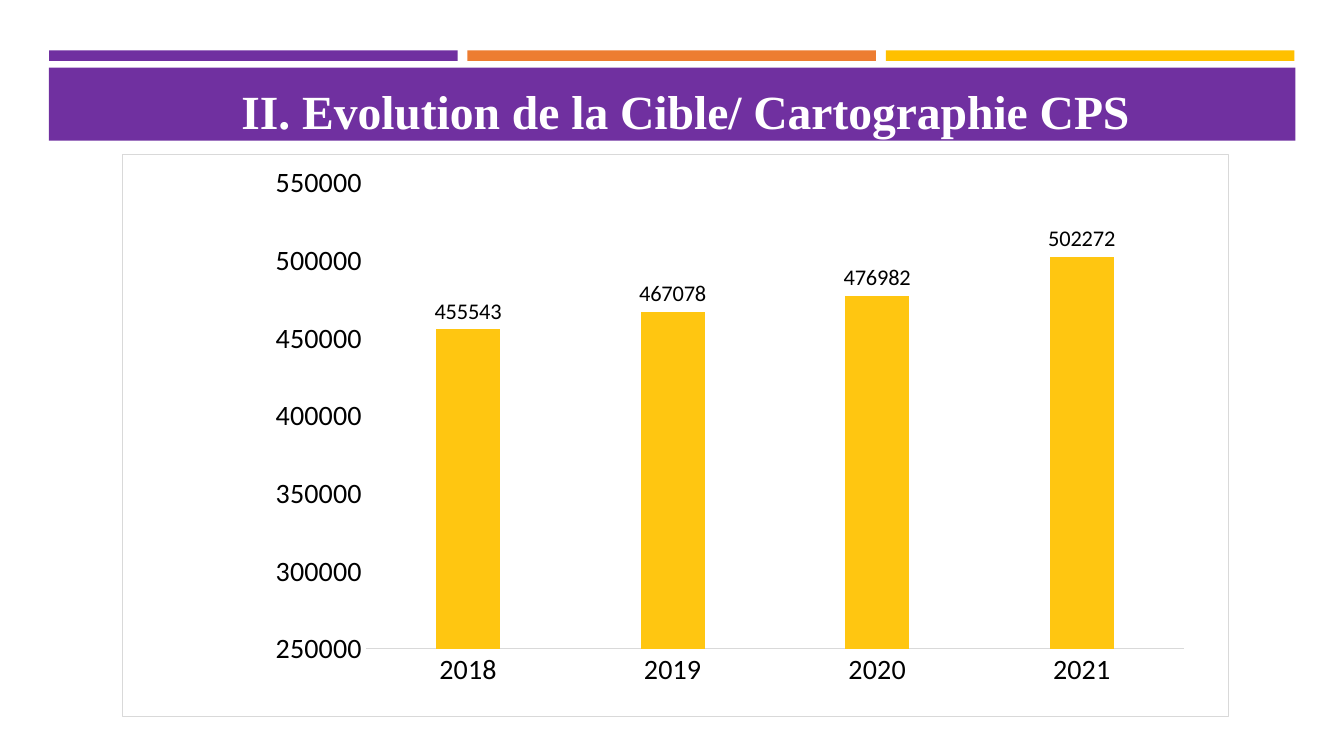
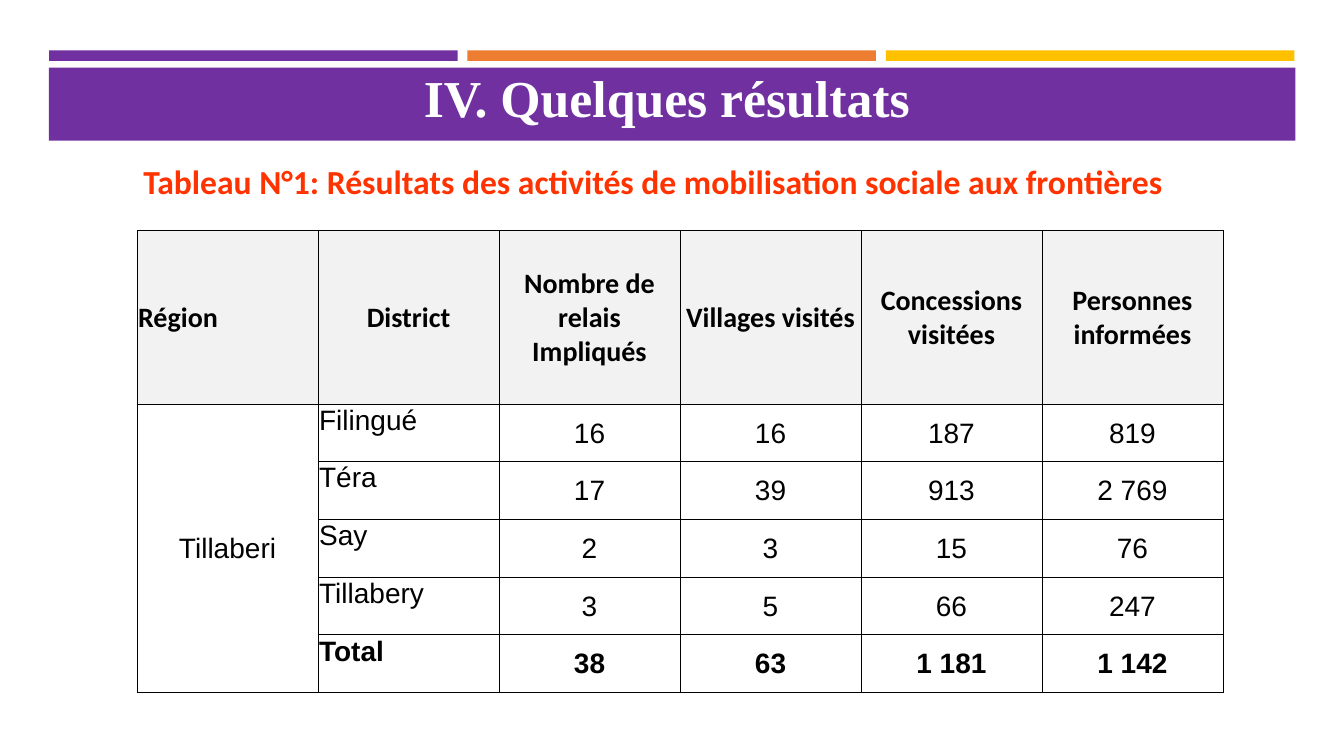
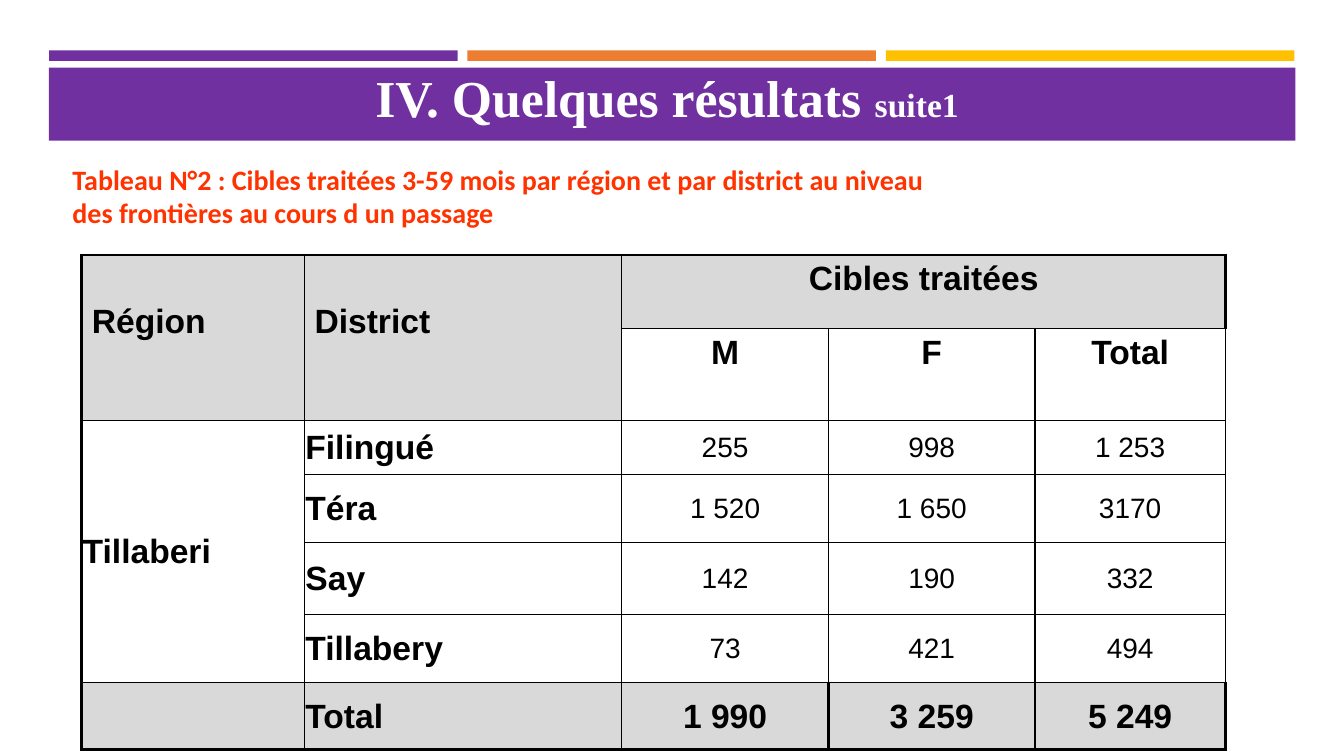
from dataclasses import dataclass, replace
from typing import Callable, NamedTuple, Optional, Sequence

import lxml.etree
import pptx
import pptx.chart.data
import pptx.dml.color
import pptx.enum.chart
import pptx.enum.shapes
import pptx.enum.text
import pptx.oxml
import pptx.oxml.ns
import pptx.util

ALIGN = pptx.enum.text.PP_ALIGN
ANCHOR = pptx.enum.text.MSO_ANCHOR
qn = pptx.oxml.ns.qn

SLIDE_WIDTH = pptx.util.Inches(13.33)
SLIDE_HEIGHT = pptx.util.Inches(7.5)


@dataclass(frozen=True)
class Theme:
    """Colours, fonts and type sizes of the whole deck."""
    purple: str = "7030A0"
    orange: str = "ED7D31"
    gold: str = "FFC000"
    bar: str = "FFC611"
    caption: str = "FF3300"
    black: str = "000000"
    white: str = "FFFFFF"
    light_grey: str = "F2F2F2"
    grey: str = "D9D9D9"
    title_font: str = "Times New Roman"
    body_font: str = "Calibri"
    table_font: str = "Arial"
    title_size: float = 37
    long_title_size: float = 34
    suffix_size: float = 24
    large_size: float = 24
    body_size: float = 20
    label_size: float = 16


THEME = Theme()


class Frame(NamedTuple):
    """A rectangle in percent of the slide's width and height."""
    left: float
    top: float
    width: float
    height: float

    def emu(self) -> tuple[int, int, int, int]:
        return (round(self.left * SLIDE_WIDTH / 100), round(self.top * SLIDE_HEIGHT / 100),
                round(self.width * SLIDE_WIDTH / 100), round(self.height * SLIDE_HEIGHT / 100))


class Span(NamedTuple):
    text: str
    size: float
    font: str
    color: str
    bold: bool = True


class Margins(NamedTuple):
    """Cell insets in inches."""
    left: float
    top: float
    right: float
    bottom: float


TIGHT = Margins(0.01, 0.01, 0.01, 0)
ROOMY = Margins(0.1, 0.05, 0.1, 0.05)


@dataclass(frozen=True)
class CellStyle:
    size: float = THEME.body_size
    font: str = THEME.table_font
    bold: bool = False
    align: ALIGN = ALIGN.CENTER
    anchor: ANCHOR = ANCHOR.MIDDLE
    margins: Margins = TIGHT
    fill: str = THEME.white


class Cell(NamedTuple):
    text: str
    style: CellStyle


class Merge(NamedTuple):
    row: int
    column: int
    last_row: int
    last_column: int


class Edges(NamedTuple):
    """Border widths of a cell in points."""
    left: float
    right: float
    top: float
    bottom: float


Grid = Sequence[Sequence[Optional[Cell]]]
TITLE_FRAME = Frame(3.83, 9.33, 91.6, 8.27)
LONG_TITLE_FRAME = Frame(2.93, 7.33, 96.2, 11.73)


def rgb(color: str) -> pptx.dml.color.RGBColor:
    return pptx.dml.color.RGBColor.from_string(color)


def style_font(font, size: float, name: str, color: str, bold: bool = False) -> None:
    font.size = pptx.util.Pt(size)
    font.name = name
    font.bold = bold
    font.color.rgb = rgb(color)


def add_spans(para, spans: Sequence[Span], align: ALIGN) -> None:
    para.alignment = align
    for span in spans:
        run = para.add_run()
        run.text = span.text
        style_font(run.font, span.size, span.font, span.color, span.bold)


# Shared parts
def add_band(page, frame: Frame, color: str):
    band = page.shapes.add_shape(pptx.enum.shapes.MSO_SHAPE.RECTANGLE, *frame.emu())
    band.shadow.inherit = False
    band.fill.solid()
    band.fill.fore_color.rgb = rgb(color)
    band.line.fill.background()
    return band


def add_bands_to_layout(layout, page) -> None:
    """Draw the header bands, then move them to the layout all slides use."""
    bands = [add_band(page, Frame(3.65 + 31.13 * index, 6.67, 30.4, 1.4), color)
             for index, color in enumerate((THEME.purple, THEME.orange, THEME.gold))]
    bands.append(add_band(page, Frame(3.63, 8.95, 92.75, 9.65), THEME.purple))
    for band in bands:
        layout.shapes.element.append(band.element)


def title_span(text: str, size: float = THEME.title_size) -> Span:
    return Span(text, size, THEME.title_font, THEME.white)


def set_title(page, spans: Sequence[Span], frame: Frame = TITLE_FRAME) -> None:
    title = page.shapes.title
    title.left, title.top, title.width, title.height = frame.emu()
    text = title.text_frame
    text.auto_size = pptx.enum.text.MSO_AUTO_SIZE.NONE
    text.word_wrap = True
    text.vertical_anchor = ANCHOR.BOTTOM
    add_spans(text.paragraphs[0], spans, ALIGN.CENTER)


def add_caption(page, frame: Frame, text: str, size: float, align: ALIGN, anchor: ANCHOR,
                line_spacing: float = 1.0) -> None:
    box = page.shapes.add_textbox(*frame.emu()).text_frame
    box.word_wrap = True
    box.vertical_anchor = anchor
    para = box.paragraphs[0]
    para.line_spacing = line_spacing
    add_spans(para, [Span(text, size, THEME.body_font, THEME.caption)], align)


# Tables
def set_borders(cell, edges: Edges) -> None:
    properties = cell._tc.get_or_add_tcPr()
    for index, (side, width) in enumerate(zip("LRTB", edges)):
        line = lxml.etree.Element(qn(f"a:ln{side}"), w=str(pptx.util.Pt(width)))
        fill = lxml.etree.SubElement(line, qn("a:solidFill"))
        lxml.etree.SubElement(fill, qn("a:srgbClr"), val=THEME.black)
        properties.insert(index, line)


def fill_cell(cell, content: Cell) -> None:
    style = content.style
    (cell.margin_left, cell.margin_top, cell.margin_right,
     cell.margin_bottom) = map(pptx.util.Inches, style.margins)
    cell.vertical_anchor = style.anchor
    cell.fill.solid()
    cell.fill.fore_color.rgb = rgb(style.fill)
    if content.text:
        span = Span(content.text, style.size, style.font, THEME.black, style.bold)
        add_spans(cell.text_frame.paragraphs[0], [span], style.align)


def add_grid(page, frame: Frame, columns: Sequence[float], rows: Sequence[float], grid: Grid,
             merges: Sequence[Merge], edges: Callable[[int, int], Edges]) -> None:
    """Draw a table; columns and rows are relative sizes within the frame."""
    left, top, width, height = frame.emu()
    table = page.shapes.add_table(len(rows), len(columns), left, top, width, height).table
    table.first_row = table.horz_banding = False
    for column, weight in zip(table.columns, columns):
        column.width = round(width * weight / sum(columns))
    for row, weight in zip(table.rows, rows):
        row.height = round(height * weight / sum(rows))
    for row_index, contents in enumerate(grid):
        for column_index, content in enumerate(contents):
            cell = table.cell(row_index, column_index)
            fill_cell(cell, content or Cell("", CellStyle()))
            set_borders(cell, edges(row_index, column_index))
    for merge in merges:
        table.cell(merge.row, merge.column).merge(table.cell(merge.last_row, merge.last_column))


def cells(texts: Sequence[str], style: CellStyle) -> list[Cell]:
    return [Cell(text, style) for text in texts]


# Chart
def set_plot_area(chart, x: float, y: float, width: float, height: float) -> None:
    area = chart.element.find(".//" + qn("c:plotArea"))
    for old in area.findall(qn("c:layout")):
        area.remove(old)
    layout = lxml.etree.Element(qn("c:layout"))
    manual = lxml.etree.SubElement(layout, qn("c:manualLayout"))
    settings = dict(layoutTarget="inner", xMode="edge", yMode="edge", x=x, y=y, w=width, h=height)
    for tag, value in settings.items():
        lxml.etree.SubElement(manual, qn(f"c:{tag}"), val=str(value))
    area.insert(0, layout)


def set_chart_border(chart, color: str, width: float) -> None:
    border = pptx.oxml.parse_xml(
        f'<c:spPr {pptx.oxml.ns.nsdecls("c", "a")}><a:noFill/>'
        f'<a:ln w="{pptx.util.Pt(width)}"><a:solidFill><a:srgbClr val="{color}"/>'
        f'</a:solidFill></a:ln></c:spPr>')
    chart.element.find(qn("c:chart")).addnext(border)


def add_target_chart(page, frame: Frame) -> None:
    data = pptx.chart.data.CategoryChartData()
    data.categories = ["2018", "2019", "2020", "2021"]
    data.add_series("Series 1", (455543, 467078, 476982, 502272))
    kind = pptx.enum.chart.XL_CHART_TYPE.COLUMN_CLUSTERED
    chart = page.shapes.add_chart(kind, *frame.emu(), data).chart
    chart.has_legend = chart.has_title = False
    style_font(chart.font, THEME.body_size, THEME.body_font, THEME.black)
    set_plot_area(chart, 0.22, 0.05, 0.74, 0.83)
    set_chart_border(chart, THEME.grey, 0.75)

    for axis in (chart.category_axis, chart.value_axis):
        axis.has_major_gridlines = False
        axis.major_tick_mark = axis.minor_tick_mark = pptx.enum.chart.XL_TICK_MARK.NONE
        style_font(axis.tick_labels.font, THEME.body_size, THEME.body_font, THEME.black)
    chart.category_axis.format.line.color.rgb = rgb(THEME.grey)
    chart.category_axis.format.line.width = pptx.util.Pt(0.75)
    values = chart.value_axis
    values.format.line.fill.background()
    values.minimum_scale, values.maximum_scale, values.major_unit = 250000, 550000, 50000

    plot = chart.plots[0]
    plot.gap_width, plot.overlap, plot.vary_by_categories = 219, -27, False
    series = plot.series[0]
    series.format.fill.solid()
    series.format.fill.fore_color.rgb = rgb(THEME.bar)
    labels = series.data_labels
    labels.show_value = True
    labels.position = pptx.enum.chart.XL_LABEL_POSITION.OUTSIDE_END
    style_font(labels.font, THEME.label_size, THEME.body_font, THEME.black)


# Slides
def fill_target_page(page) -> None:
    set_title(page, [title_span("II. Evolution de la Cible/ Cartographie CPS",
                                THEME.long_title_size)], LONG_TITLE_FRAME)
    add_target_chart(page, Frame(9.08, 20.4, 82.35, 74.4))


def fill_mobilisation_page(page) -> None:
    set_title(page, [title_span("IV. Quelques résultats")])
    add_caption(page, Frame(9.22, 20.27, 78.75, 7.07),
                "Tableau N°1: Résultats des activités de mobilisation sociale aux frontières",
                THEME.large_size, ALIGN.CENTER, ANCHOR.BOTTOM, 0.9)

    header = CellStyle(font=THEME.body_font, bold=True, fill=THEME.light_grey)
    number = CellStyle()
    district = replace(number, align=ALIGN.LEFT, anchor=ANCHOR.TOP)
    grid: list[list[Optional[Cell]]] = [
        [Cell("Région", replace(header, align=ALIGN.LEFT)),
         *cells(("District", "Nombre de relais Impliqués", "Villages visités",
                 "Concessions visitées", "Personnes informées"), header)]]
    records = (("Filingué", "16", "16", "187", "819"),
               ("Téra", "17", "39", "913", "2 769"),
               ("Say", "2", "3", "15", "76"),
               ("Tillabery", "3", "5", "66", "247"),
               ("Total", "38", "63", "1 181", "1 142"))
    for index, (name, *counts) in enumerate(records):
        bold = name == "Total"
        grid.append([None if index else Cell("Tillaberi", number),
                     Cell(name, replace(district, bold=bold)),
                     *cells(counts, replace(number, bold=bold))])
    add_grid(page, Frame(10.2, 30.53, 80.8, 61.07), [1] * 6, [3] + [1] * 5, grid,
             [Merge(1, 0, 5, 0)], lambda row, column: Edges(0.5, 0.5, 0.5, 0.5))


def treated_edges(row: int, column: int) -> Edges:
    """Heavy outer frame, and heavy lines between the totals."""
    thin, heavy = 1, 2.25
    last = row == 6
    return Edges(left=heavy if column == 0 or last and column > 2 else thin,
                 right=heavy if row == 0 and column in (2, 4) or last and column > 1 else thin,
                 top=heavy if row == 0 else thin,
                 bottom=heavy if last else thin)


def fill_treated_page(page) -> None:
    set_title(page, [title_span("IV. Quelques résultats "),
                     title_span("suite1", THEME.suffix_size)])

    label = CellStyle(size=THEME.large_size, bold=True, align=ALIGN.LEFT)
    heading = replace(label, align=ALIGN.CENTER, anchor=ANCHOR.TOP, margins=ROOMY)
    shaded = replace(heading, fill=THEME.grey)
    tall = replace(shaded, align=ALIGN.LEFT, margins=ROOMY._replace(top=0.48))
    total = replace(label, fill=THEME.grey)
    grid: list[list[Optional[Cell]]] = [
        [*cells(("Région", "District"), tall), Cell("Cibles traitées", shaded), None, None],
        [None, None, *cells(("M", "F", "Total"), heading)]]
    records = (("Filingué", "255", "998", "1 253"),
               ("Téra", "1 520", "1 650", "3170"),
               ("Say", "142", "190", "332"),
               ("Tillabery", "73", "421", "494"))
    for index, (name, *counts) in enumerate(records):
        grid.append([None if index else Cell("Tillaberi", label), Cell(name, label),
                     *cells(counts, CellStyle())])
    grid.append([*cells(("", "Total"), total),
                 *cells(("1 990", "3 259", "5 249"), replace(total, align=ALIGN.CENTER))])
    add_grid(page, Frame(6.08, 33.73, 85.1, 65.47), (2.21, 3.15, 2.05, 2.05, 1.89),
             (0.73, 0.91, 0.54, 0.67, 0.72, 0.67, 0.67), grid,
             [Merge(0, 0, 1, 0), Merge(0, 1, 1, 1), Merge(0, 2, 0, 4), Merge(2, 0, 5, 0)],
             treated_edges)
    add_caption(page, Frame(4.65, 20.8, 67.35, 10.27),
                "Tableau N°2 : Cibles traitées 3-59 mois par région et par district au niveau "
                "des frontières au cours d un passage",
                THEME.body_size, ALIGN.LEFT, ANCHOR.TOP)


def main() -> None:
    deck = pptx.Presentation()
    deck.slide_width, deck.slide_height = SLIDE_WIDTH, SLIDE_HEIGHT
    layout = deck.slide_layouts.get_by_name("Title Only")
    pages = [deck.slides.add_slide(layout) for _ in range(3)]
    add_bands_to_layout(layout, pages[0])
    for fill_page, page in zip((fill_target_page, fill_mobilisation_page, fill_treated_page), pages):
        fill_page(page)
    deck.save("out.pptx")


if __name__ == "__main__":
    main()
